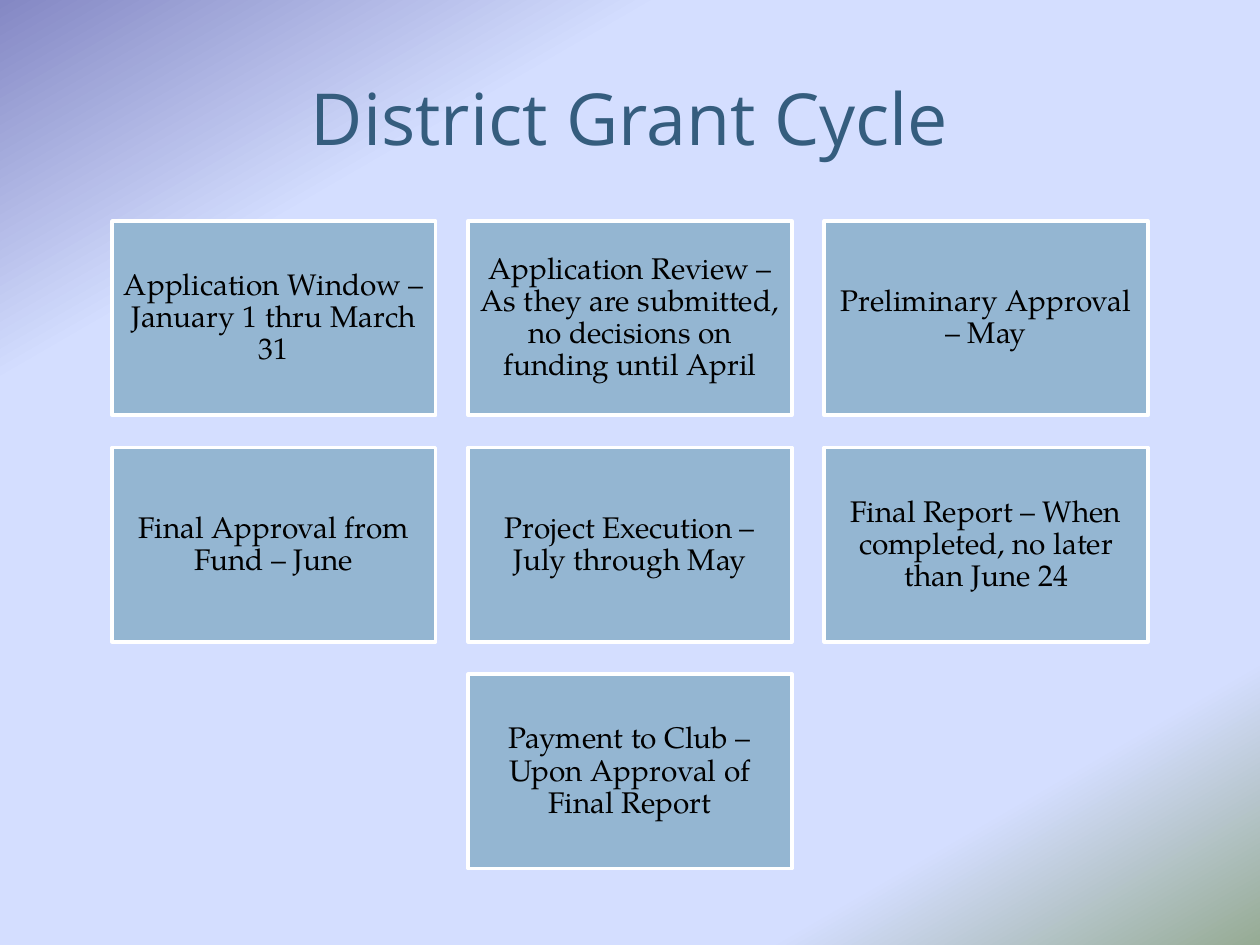
from dataclasses import dataclass

from lxml import etree
from pptx import Presentation
from pptx.dml.color import RGBColor
from pptx.enum.shapes import MSO_SHAPE
from pptx.enum.text import MSO_ANCHOR, MSO_AUTO_SIZE, PP_ALIGN
from pptx.oxml.ns import qn
from pptx.shapes.autoshape import Shape
from pptx.slide import Slide
from pptx.text.text import TextFrame
from pptx.util import Pt

RECTANGLE = MSO_SHAPE.RECTANGLE
MIDDLE = MSO_ANCHOR.MIDDLE
CENTER = PP_ALIGN.CENTER
NO_AUTOFIT = MSO_AUTO_SIZE.NONE


@dataclass(frozen=True)
class TextStyle:
    font: str
    size: float
    color: str
    line_spacing: float


@dataclass(frozen=True)
class Theme:
    title: TextStyle = TextStyle("Open Sans", 41, "355D7E", 1.0)
    step: TextStyle = TextStyle("TeX Gyre Pagella", 17, "000000", 0.9)
    step_fill: str = "94B6D2"
    step_line: str = "FFFFFF"
    # Gradient stops: position in percent, colour
    background: tuple[tuple[int, str], ...] = (
        (0, "8488C4"), (23, "D4DEFF"), (83, "D4DEFF"), (100, "96AB94"),
    )
    background_angle: int = 300  # counter-clockwise


@dataclass(frozen=True)
class Grid:
    slide_width: float = 720
    top: float = 126.3
    width: float = 185
    height: float = 111
    gap: float = 18.5

    def row_left(self, count: int) -> float:
        """Left edge of a centred row of boxes."""
        return (self.slide_width - count * self.width - (count - 1) * self.gap) / 2


THEME = Theme()
GRID = Grid()
STEP_ROWS = (
    (
        "Application Window – January 1 thru March 31",
        "Application Review – As they are submitted, no decisions on funding until April",
        "Preliminary Approval – May",
    ),
    (
        "Final Approval from Fund – June",
        "Project Execution – July through May",
        "Final Report – When completed, no later than June 24",
    ),
    ("Payment to Club – Upon Approval of Final Report",),
)


def write_text(frame: TextFrame, text: str, style: TextStyle) -> None:
    frame.text = text
    frame.word_wrap = True
    frame.auto_size = NO_AUTOFIT
    frame.vertical_anchor = MIDDLE
    paragraph = frame.paragraphs[0]
    paragraph.alignment = CENTER
    paragraph.line_spacing = style.line_spacing
    paragraph.font.name = style.font
    paragraph.font.size = Pt(style.size)
    paragraph.font.color.rgb = RGBColor.from_string(style.color)


def paint_background(slide: Slide) -> None:
    fill = slide.background.fill
    fill.gradient()
    fill.gradient_angle = THEME.background_angle
    # Replace the two default stops with the theme's stops
    stop_list = next(slide.element.iter(qn("a:gsLst")))
    for stop in list(stop_list):
        stop_list.remove(stop)
    for position, color in THEME.background:
        stop = etree.SubElement(stop_list, qn("a:gs"), pos=str(position * 1000))
        etree.SubElement(stop, qn("a:srgbClr"), val=color)


def add_title(slide: Slide, text: str) -> None:
    title = slide.shapes.title
    title.left, title.top = Pt(36), Pt(21.6)
    title.width, title.height = Pt(648), Pt(90)
    write_text(title.text_frame, text, THEME.title)


def add_step(slide: Slide, text: str, left: float, top: float) -> Shape:
    shape = slide.shapes.add_shape(
        RECTANGLE, Pt(left), Pt(top), Pt(GRID.width), Pt(GRID.height)
    )
    shape.shadow.inherit = False
    shape.fill.solid()
    shape.fill.fore_color.rgb = RGBColor.from_string(THEME.step_fill)
    shape.line.color.rgb = RGBColor.from_string(THEME.step_line)
    shape.line.width = Pt(2)
    frame = shape.text_frame
    frame.margin_left = frame.margin_right = Pt(5)
    frame.margin_top = frame.margin_bottom = Pt(5)
    write_text(frame, text, THEME.step)
    return shape


def main() -> None:
    presentation = Presentation()
    presentation.slide_width, presentation.slide_height = Pt(GRID.slide_width), Pt(540)
    title_only = presentation.slide_layouts[5]
    slide = presentation.slides.add_slide(title_only)

    paint_background(slide)
    add_title(slide, "District Grant Cycle")

    # Steps of the cycle, row by row
    for row, steps in enumerate(STEP_ROWS):
        top = GRID.top + row * (GRID.height + GRID.gap)
        for column, text in enumerate(steps):
            left = GRID.row_left(len(steps)) + column * (GRID.width + GRID.gap)
            add_step(slide, text, left, top)

    presentation.save("out.pptx")


if __name__ == "__main__":
    main()
